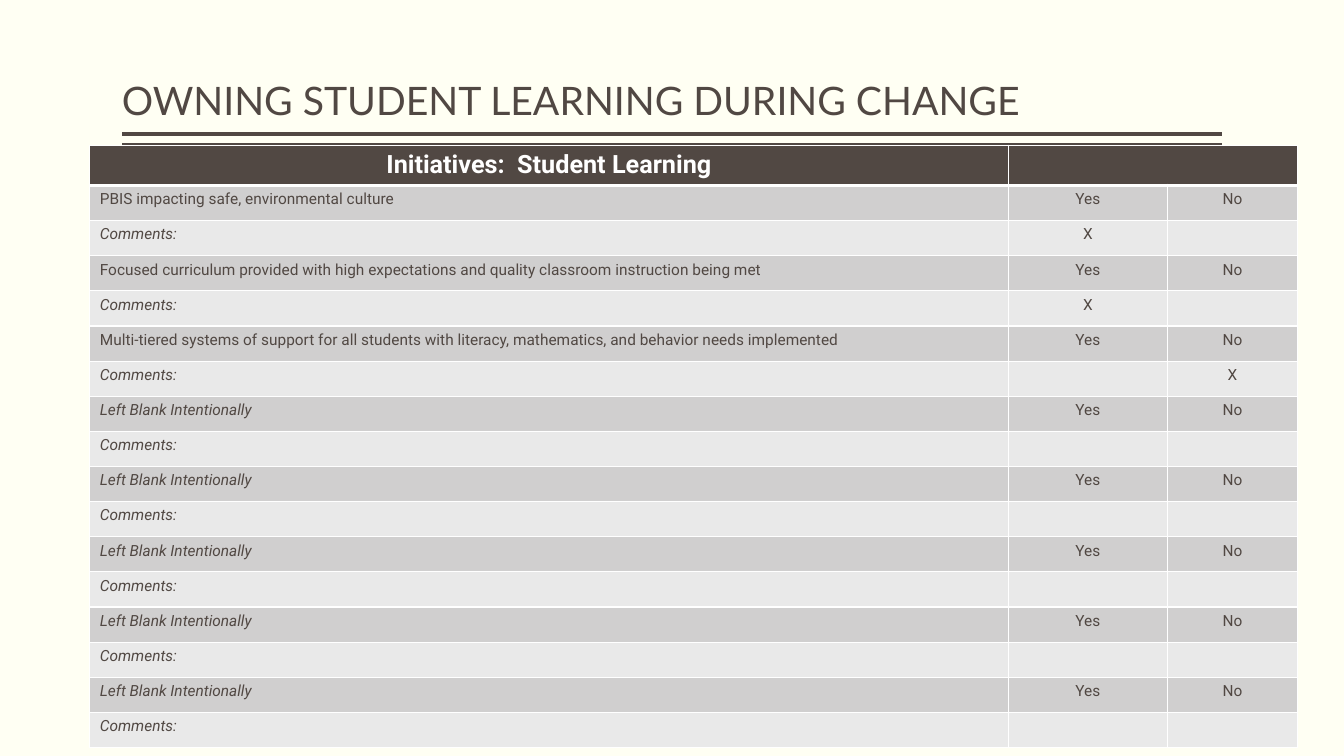
from lxml.etree import SubElement
from pptx import Presentation
from pptx.dml.color import RGBColor
from pptx.enum.shapes import MSO_CONNECTOR
from pptx.enum.text import MSO_ANCHOR, PP_ALIGN
from pptx.oxml.ns import qn
from pptx.util import Inches, Pt

COLORS = {
    "background": "FFFFF3",
    "ink": "514843",
    "white": "FFFFFF",
    "initiative": "D0CFCF",
    "comments": "E9E9E9",
}
BLANK = "Left Blank Intentionally"
INITIATIVES = [
    ("PBIS impacting safe, environmental culture", "Yes"),
    ("Focused curriculum provided with high expectations and quality classroom instruction being met", "Yes"),
    ("Multi-tiered systems of support for all students with literacy, mathematics, and behavior needs implemented", "No"),
] + [(BLANK, None)] * 5


def color(name):
    return RGBColor.from_string(COLORS[name])


def style_text(paragraph, font_name, size, ink, bold=False, italic=False):
    for run in paragraph.runs:
        font = run.font
        font.name, font.size = font_name, Pt(size)
        font.bold, font.italic = bold, italic
        font.color.rgb = color(ink)


def add_title(slide, left, top, width, height):
    frame = slide.shapes.add_textbox(
        Inches(left), Inches(top), Inches(width), Inches(height)).text_frame
    frame.word_wrap = True
    frame.vertical_anchor = MSO_ANCHOR.BOTTOM
    frame.margin_left = frame.margin_right = 0
    heading = frame.paragraphs[0]
    heading.text = "OWNING STUDENT LEARNING DURING CHANGE"
    heading.line_spacing = 0.9
    style_text(heading, "Lato", 28, "ink")

    for offset, weight in ((0.05, 3), (0.15, 1)):
        y = Inches(top + height + offset)
        rule = slide.shapes.add_connector(
            MSO_CONNECTOR.STRAIGHT, Inches(left + width), y, Inches(left), y)
        rule.line.color.rgb = color("ink")
        rule.line.width = Pt(weight)
        SubElement(rule._element.spPr, qn("a:effectLst"))


def set_borders(cell, bottom):
    properties = cell._tc.get_or_add_tcPr()
    for side, weight in (("L", 1), ("R", 1), ("T", 1), ("B", bottom)):
        border = SubElement(properties, qn(f"a:ln{side}"), w=str(Pt(weight)))
        fill = SubElement(border, qn("a:solidFill"))
        SubElement(fill, qn("a:srgbClr"), val=COLORS["white"])


def fill_cell(cell, text, fill, centered, size=11, ink="ink", bold=False, bottom=1):
    set_borders(cell, bottom)
    cell.fill.solid()
    cell.fill.fore_color.rgb = color(fill)
    if not text:
        cell.margin_top = cell.margin_bottom = 0
        return
    paragraph = cell.text_frame.paragraphs[0]
    paragraph.text = text
    paragraph.alignment = PP_ALIGN.CENTER if centered else PP_ALIGN.LEFT
    style_text(paragraph, "Roboto", size, ink, bold, text in (BLANK, "Comments:"))


def add_checklist(slide, left, top, width, height):
    answers = ("Yes", "No")
    rows = []
    for initiative, answer in INITIATIVES:
        rows.append((initiative, *answers))
        rows.append(("Comments:", *("X" if answer == a else "" for a in answers)))

    checklist = slide.shapes.add_table(
        len(rows) + 1, 3, Inches(left), Inches(top), Inches(width), Inches(height)).table
    checklist.horz_banding = False
    answer_widths = (1.58, 1.29)
    widths = (width - sum(answer_widths), *answer_widths)
    for column, column_width in zip(checklist.columns, widths):
        column.width = Inches(column_width)
    header_height = 0.4
    row_height = (height - header_height) / len(rows)
    for index, row in enumerate(checklist.rows):
        row.height = Inches(row_height if index else header_height)

    checklist.cell(0, 1).merge(checklist.cell(0, 2))
    for c, text in enumerate(("Initiatives:  Student Learning", "", "")):
        fill_cell(checklist.cell(0, c), text, "ink", True, 18, "white", True, 3)
    for r, texts in enumerate(rows, start=1):
        fill = "initiative" if r % 2 else "comments"
        for c, text in enumerate(texts):
            fill_cell(checklist.cell(r, c), text, fill, c > 0)


def main():
    presentation = Presentation()
    presentation.slide_width = Inches(13.33)
    presentation.slide_height = Inches(7.5)
    slide = presentation.slides.add_slide(presentation.slide_layouts[6])
    slide.background.fill.solid()
    slide.background.fill.fore_color.rgb = color("background")
    add_title(slide, 1.21, 0.08, 10.91, 1.2)
    add_checklist(slide, 0.89, 1.44, 11.98, 5.98)
    presentation.save("out.pptx")


if __name__ == "__main__":
    main()
